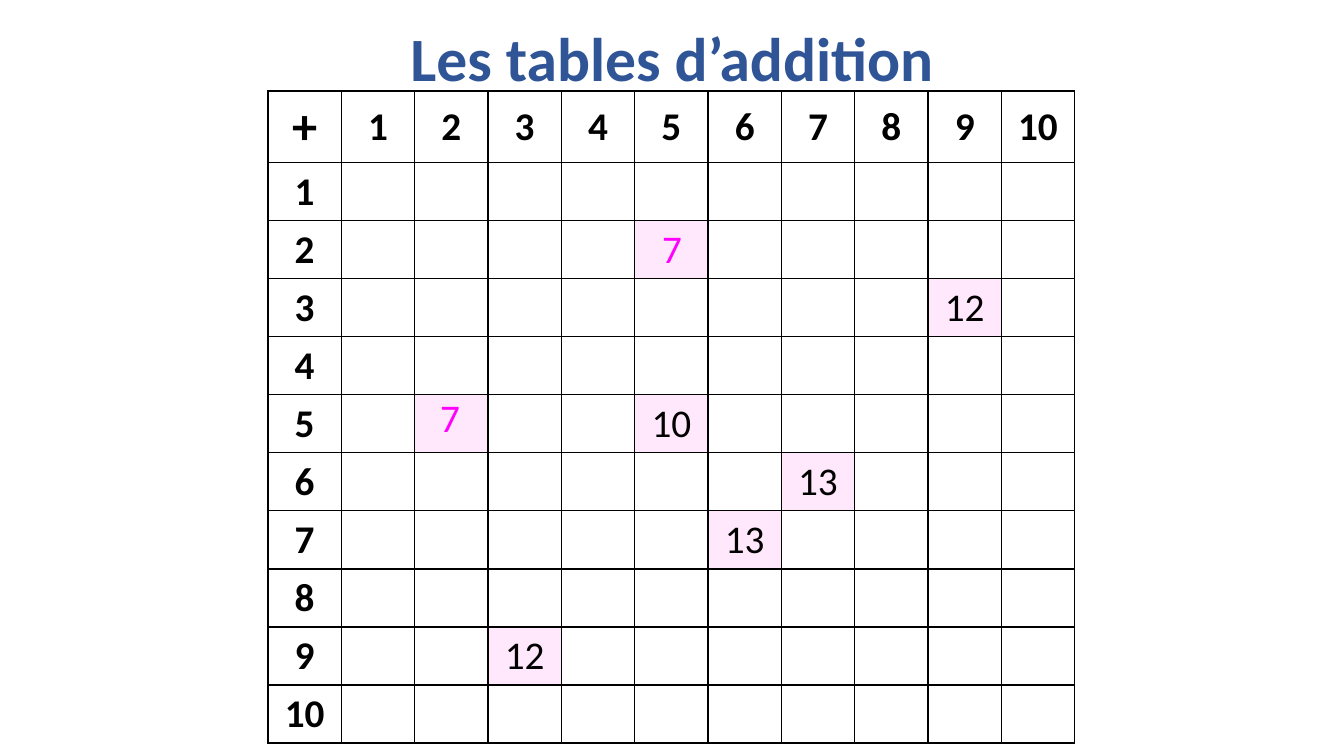
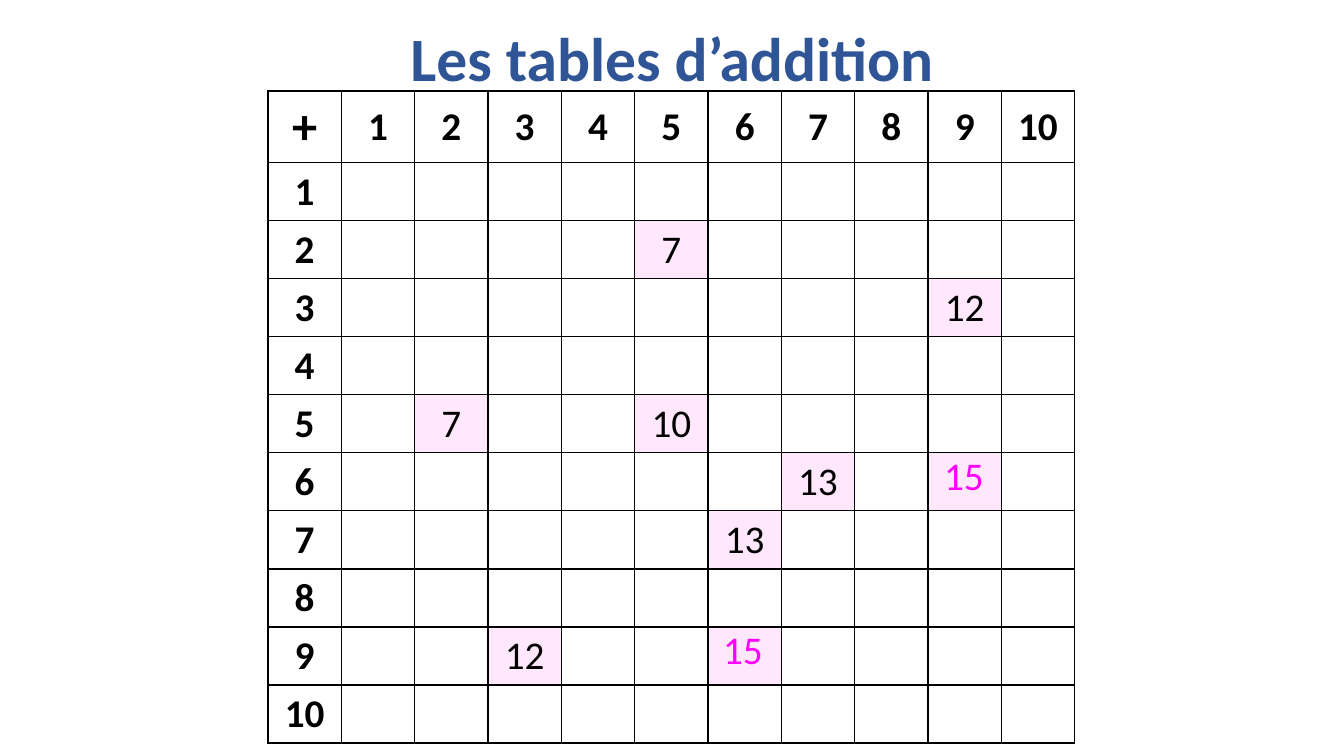
from dataclasses import dataclass

from lxml.etree import SubElement
from pptx import Presentation
from pptx.dml.color import RGBColor
from pptx.enum.text import MSO_ANCHOR, MSO_AUTO_SIZE, PP_ALIGN
from pptx.oxml.ns import qn
from pptx.util import Emu, Pt

PX = 914400 / 100.8
TITLE_ONLY = 5
LAST_NUMBER = 10


def px(length):
    return Emu(round(length * PX))


@dataclass(frozen=True)
class Theme:
    font: str = "Calibri"
    title: str = "2F5597"
    ink: str = "000000"
    answer: str = "FF00FF"
    paper: str = "FFFFFF"
    highlight: str = "FFE7FC"
    title_size: int = 44
    sign_size: int = 36
    number_size: int = 28
    border: int = 1


class AdditionDeck:
    def __init__(self, theme):
        self.theme = theme
        self.deck = Presentation()
        self.deck.slide_width, self.deck.slide_height = px(1344), px(756)
        self.page = None

    def add_page(self, title):
        self.page = self.deck.slides.add_slide(self.deck.slide_layouts[TITLE_ONLY])
        box = self.page.shapes.title
        place = {"left": 93, "top": -11, "width": 1159, "height": 146}
        for name, length in place.items():
            setattr(box, name, px(length))
        frame = box.text_frame
        frame.auto_size = MSO_AUTO_SIZE.NONE
        frame.vertical_anchor = MSO_ANCHOR.MIDDLE
        self.set_text(frame, title, self.theme.title_size, self.theme.title, bold=True)
        frame.paragraphs[0].line_spacing = 0.9

    def set_text(self, frame, text, size, colour, bold=False):
        para = frame.paragraphs[0]
        para.alignment = PP_ALIGN.CENTER
        span = para.add_run()
        span.text = text
        formats = {"name": self.theme.font, "size": Pt(size), "bold": bold}
        for name, value in formats.items():
            setattr(span.font, name, value)
        span.font.color.rgb = RGBColor.from_string(colour)

    def draw_borders(self, cell):
        """Must run before the cell is filled: the schema puts borders first."""
        properties = cell._tc.get_or_add_tcPr()
        for side in ("a:lnL", "a:lnR", "a:lnT", "a:lnB"):
            line = SubElement(properties, qn(side), w=str(Pt(self.theme.border)))
            fill = SubElement(line, qn("a:solidFill"))
            SubElement(fill, qn("a:srgbClr"), val=self.theme.ink)

    def add_addition_table(self, shown, asked):
        """Print the sums of the shown cells; only tint the asked ones."""
        theme, count = self.theme, LAST_NUMBER + 1
        header_height, row_height = 71, 58
        table = self.page.shapes.add_table(
            count, count, px(268), px(91), px(807),
            px(header_height + LAST_NUMBER * row_height)).table
        table.first_row = table.horz_banding = False
        for row in range(count):
            table.rows[row].height = px(row_height if row else header_height)
            for column in range(count):
                cell = table.cell(row, column)
                cell.vertical_anchor = MSO_ANCHOR.MIDDLE
                self.draw_borders(cell)
                tinted = (row, column) in shown or (row, column) in asked
                cell.fill.solid()
                cell.fill.fore_color.rgb = RGBColor.from_string(
                    theme.highlight if tinted else theme.paper)
                header = row == 0 or column == 0
                if row == column == 0:
                    self.set_text(cell.text_frame, "+", theme.sign_size, theme.ink, True)
                elif header or (row, column) in shown:
                    self.set_text(cell.text_frame, str(row + column),
                                  theme.number_size, theme.ink, header)

    def add_answers(self, asked):
        group = self.page.shapes.add_group_shape()
        for (row, column), (left, top) in asked.items():
            box = group.shapes.add_textbox(px(left), px(top), px(72), px(58))
            frame = box.text_frame
            frame.word_wrap = True
            frame.auto_size = MSO_AUTO_SIZE.SHAPE_TO_FIT_TEXT
            self.set_text(frame, str(row + column),
                          self.theme.number_size, self.theme.answer)


def main():
    addition = AdditionDeck(Theme())
    shown = {(3, 9), (9, 3), (5, 5), (6, 7), (7, 6)}
    # Each asked (row, column) has the left and top of its answer.
    steps = [
        {(2, 5): (636, 219), (5, 2): (414, 388)},
        {(6, 9): (928, 446), (9, 6): (707, 620)},
    ]
    for asked in steps:
        addition.add_page("Les tables d’addition")
        addition.add_addition_table(shown, asked)
        addition.add_answers(asked)
        shown = shown | set(asked)
    addition.deck.save("out.pptx")


if __name__ == "__main__":
    main()
